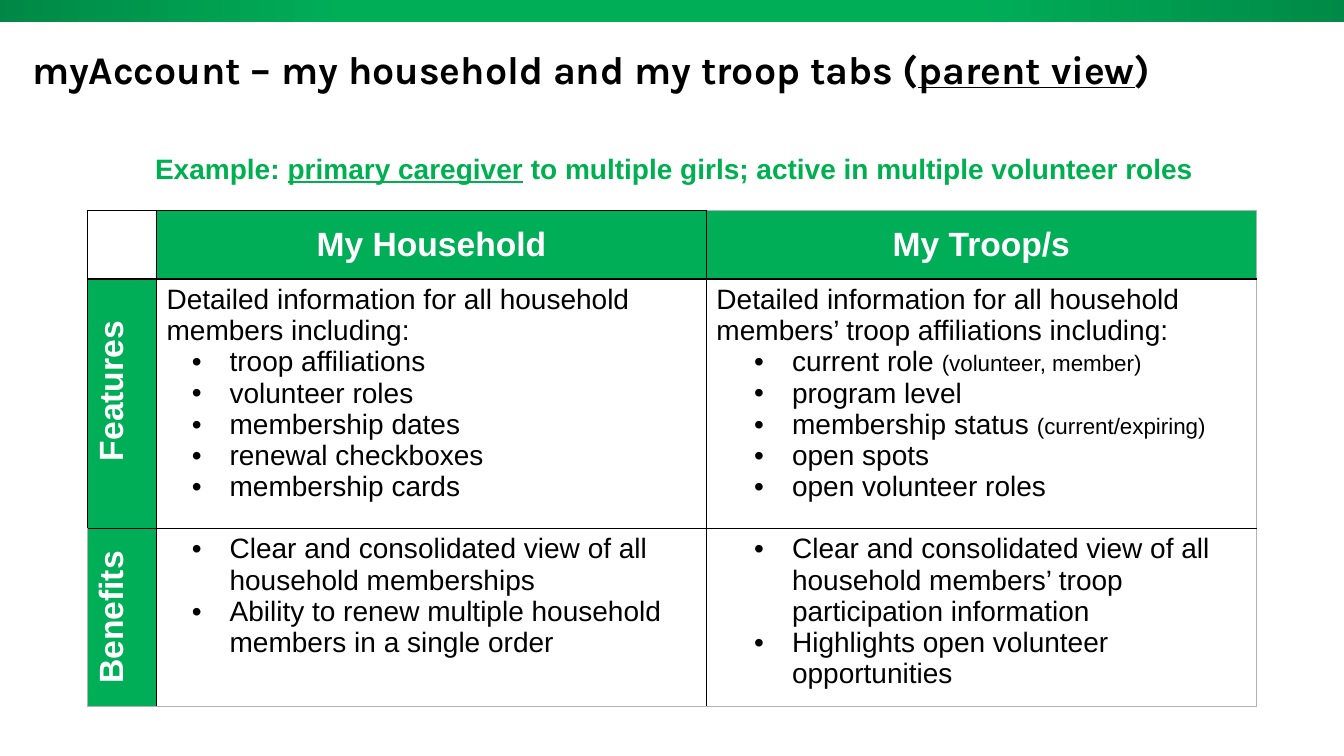
from dataclasses import dataclass

from lxml.etree import SubElement
from pptx import Presentation
from pptx.dml.color import RGBColor
from pptx.enum.shapes import MSO_SHAPE
from pptx.enum.text import MSO_ANCHOR, PP_ALIGN
from pptx.oxml.ns import qn
from pptx.util import Pt

COLORS = {
    "dark green": "008745",
    "green": "00AE58",
    "subtitle green": "00B050",
    "white": "FFFFFF",
    "black": "000000",
    "gray": "B2B2B2",
}
BULLET_HANGING = 27


@dataclass
class Span:
    text: str
    size: float = 20
    color: str = "black"
    bold: bool = False
    underline: bool = False
    font: str = "Arial"


@dataclass
class Line:
    spans: list[Span]
    bulleted: bool = False
    centered: bool = False
    indent: float = 0


@dataclass
class Cell:
    lines: list[Line]
    fill: str = "white"
    vertical: bool = False


def color(name: str) -> RGBColor:
    return RGBColor.from_string(COLORS[name])


def write_lines(text_frame, lines: list[Line]) -> None:
    for index, line in enumerate(lines):
        paragraph = text_frame.paragraphs[0] if index == 0 else text_frame.add_paragraph()
        properties = paragraph._p.get_or_add_pPr()
        if line.indent:
            properties.set("marL", str(Pt(line.indent)))
        if line.bulleted:
            properties.set("indent", str(-Pt(BULLET_HANGING)))
            SubElement(properties, qn("a:buFont"), typeface="Arial")
            SubElement(properties, qn("a:buChar"), char="•")
        paragraph.alignment = PP_ALIGN.CENTER if line.centered else PP_ALIGN.LEFT
        for span in line.spans:
            run = paragraph.add_run()
            run.text = span.text
            run.font.name = span.font
            run.font.size = Pt(span.size)
            run.font.bold = span.bold
            run.font.underline = span.underline
            run.font.color.rgb = color(span.color)


def add_text(slide, left: float, top: float, width: float, height: float, line: Line):
    box = slide.shapes.add_textbox(Pt(left), Pt(top), Pt(width), Pt(height))
    box.text_frame.word_wrap = True
    write_lines(box.text_frame, [line])
    return box.text_frame


def heading(text: str, vertical: bool = False, indent: float = 0) -> Cell:
    span = Span(text, size=24, color="white", bold=True)
    return Cell([Line([span], centered=True, indent=indent)], "green", vertical)


def details(indent: float, bullets: list[tuple[str, ...]], intro: str = "") -> Cell:
    """Each bullet is its text, with an optional smaller remark after it."""
    lines = [Line([Span(intro)])] if intro else []
    for text, *remarks in bullets:
        spans = [Span(text)] + [Span(remark, size=16) for remark in remarks]
        lines.append(Line(spans, bulleted=True, indent=indent))
    return Cell(lines)


def set_borders(table_cell, edges: dict[str, str]) -> None:
    properties = table_cell._tc.get_or_add_tcPr()
    for edge, name in edges.items():
        border = SubElement(properties, qn(f"a:{edge}"), w=str(Pt(1)))
        fill = SubElement(border, qn("a:solidFill"))
        SubElement(fill, qn("a:srgbClr"), val=COLORS[name])


def add_top_bar(slide) -> None:
    bar = slide.shapes.add_shape(MSO_SHAPE.RECTANGLE, Pt(-8.6), Pt(-0.7), Pt(988.6), Pt(16.5))
    bar.shadow.inherit = False
    bar.line.fill.background()
    bar.fill.gradient()
    bar.fill.gradient_angle = 0
    stops = bar._element.spPr.find(qn("a:gradFill")).find(qn("a:gsLst"))
    for stop in list(stops):
        stops.remove(stop)
    for percent, name in [(0, "dark green"), (26, "green"), (71, "green"), (100, "dark green")]:
        stop = SubElement(stops, qn("a:gs"), pos=str(percent * 1000))
        SubElement(stop, qn("a:srgbClr"), val=COLORS[name])


def add_tab_table(slide, rows: list[list[Cell]]) -> None:
    widths, heights = [49.2, 392.8, 392.8], [49, 178.2, 127.2]
    frame = slide.shapes.add_table(
        len(heights), len(widths), Pt(62.6), Pt(150.3), Pt(sum(widths)), Pt(sum(heights))
    )
    table = frame.table
    table.first_row = table.horz_banding = False
    for column, width in zip(table.columns, widths):
        column.width = Pt(width)
    for row, height in zip(table.rows, heights):
        row.height = Pt(height)
    last_row, last_column = len(heights) - 1, len(widths) - 1
    for row_index, row in enumerate(rows):
        for column_index, cell in enumerate(row):
            table_cell = table.cell(row_index, column_index)
            at_right, at_bottom = column_index == last_column, row_index == last_row
            set_borders(table_cell, {
                "lnL": "gray" if at_bottom and column_index == 0 else "black",
                "lnR": "gray" if at_right else "black",
                "lnT": "gray" if at_right and row_index == 0 else "black",
                "lnB": "gray" if at_bottom else "black",
            })
            table_cell.fill.solid()
            table_cell.fill.fore_color.rgb = color(cell.fill)
            if cell.fill == "green":
                table_cell.vertical_anchor = MSO_ANCHOR.MIDDLE
            if cell.vertical:
                table_cell._tc.tcPr.set("vert", "vert270")
            write_lines(table_cell.text_frame, cell.lines)


def main() -> None:
    presentation = Presentation()
    presentation.slide_width, presentation.slide_height = Pt(960), Pt(540)
    slide = presentation.slides.add_slide(presentation.slide_layouts[6])
    add_top_bar(slide)

    # Title and subtitle
    title_style = {"size": 28, "bold": True, "font": "Karla"}
    title = add_text(slide, 23, 24.5, 881.3, 49.7, Line([
        Span("myAccount – my household and my troop tabs (", **title_style),
        Span("parent view", underline=True, **title_style),
        Span(")", **title_style),
    ]))
    title.margin_left = title.margin_right = title.margin_top = title.margin_bottom = 0
    title.vertical_anchor = MSO_ANCHOR.MIDDLE
    subtitle_style = {"color": "subtitle green", "bold": True}
    add_text(slide, 66.2, 104.4, 830.9, 31.7, Line([
        Span("Example: ", **subtitle_style),
        Span("primary caregiver", underline=True, **subtitle_style),
        Span(" to multiple girls; active in multiple volunteer roles", **subtitle_style),
    ], centered=True))

    # Features and benefits of the two tabs
    household_indent, troop_indent = 45, 54
    add_tab_table(slide, [
        [Cell([]), heading("My Household"), heading("My Troop/s")],
        [
            heading("Features", vertical=True, indent=18),
            details(household_indent, [
                ("troop affiliations",), ("volunteer roles",), ("membership dates",),
                ("renewal checkboxes",), ("membership cards",),
            ], "Detailed information for all household members including:"),
            details(troop_indent, [
                ("current role ", "(volunteer, member)"), ("program level",),
                ("membership status ", "(current/expiring)"), ("open spots",),
                ("open volunteer roles",),
            ], "Detailed information for all household members’ troop affiliations including:"),
        ],
        [
            heading("Benefits", vertical=True),
            details(household_indent, [
                ("Clear and consolidated view of all household memberships",),
                ("Ability to renew multiple household members in a single order",),
            ]),
            details(troop_indent, [
                ("Clear and consolidated view of all household members’ troop "
                 "participation information",),
                ("Highlights open volunteer opportunities",),
            ]),
        ],
    ])
    presentation.save("out.pptx")


if __name__ == "__main__":
    main()
